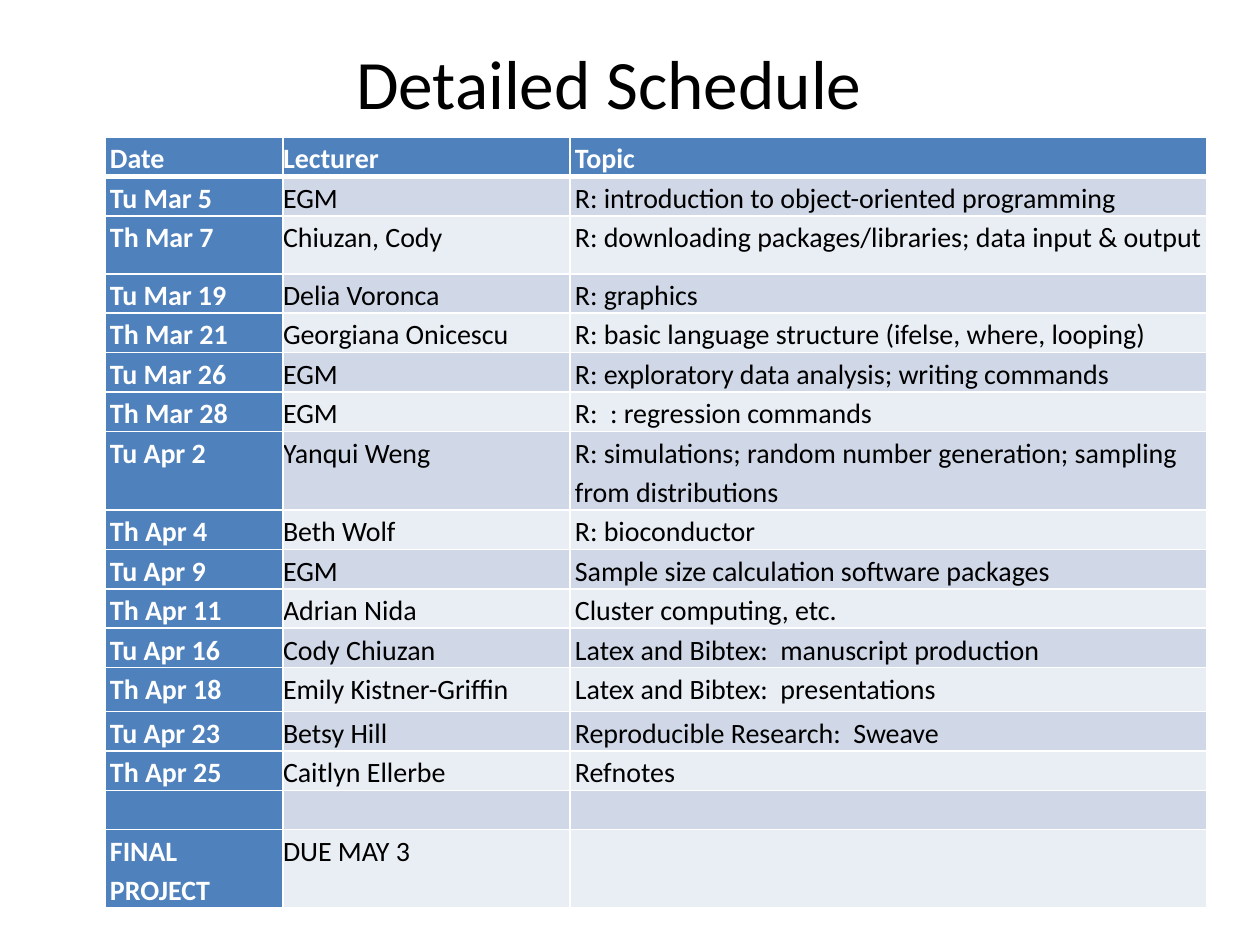
import pptx
import pptx.util
import pptx.dml.color
import pptx.enum.text
import pptx.oxml
import pptx.oxml.ns
import lxml.etree

TITLE = "Detailed Schedule"
SCHEDULE = [
    ("Date", "Lecturer", "Topic"),
    ("Tu Mar 5", "EGM", "R: introduction to object-oriented programming"),
    ("Th Mar 7", "Chiuzan, Cody", "R: downloading packages/libraries; data input & output"),
    ("Tu Mar 19", "Delia Voronca", "R: graphics"),
    ("Th Mar 21", "Georgiana Onicescu", "R: basic language structure (ifelse, where, looping)"),
    ("Tu Mar 26", "EGM", "R: exploratory data analysis; writing commands"),
    ("Th Mar 28", "EGM", "R:  : regression commands"),
    ("Tu Apr 2", "Yanqui Weng",
     "R: simulations; random number generation; sampling from distributions"),
    ("Th Apr 4", "Beth Wolf", "R: bioconductor"),
    ("Tu Apr 9", "EGM", "Sample size calculation software packages"),
    ("Th Apr 11", "Adrian Nida", "Cluster computing, etc."),
    ("Tu Apr 16", "Cody Chiuzan", "Latex and Bibtex:  manuscript production"),
    ("Th Apr 18", "Emily Kistner-Griffin", "Latex and Bibtex:  presentations"),
    ("Tu Apr 23", "Betsy Hill", "Reproducible Research:  Sweave"),
    ("Th Apr 25", "Caitlyn Ellerbe", "Refnotes"),
    ("", "", ""),
    ("FINAL PROJECT", "DUE MAY 3", ""),
]
COLUMN_WIDTHS = [178, 287, 637]
CELL_INSETS = [5, 0, 5]
ROW_HEIGHT = 39
TALL_ROWS = {2: 58, 7: 78, 12: 44, 16: 78}
FONT = "Calibri"
TEXT_SIZE = 16
BLUE, BANDS = "4F81BD", ("E9EDF4", "D0D8E8")
WHITE, BLACK = "FFFFFF", "000000"


def px(count):
    return pptx.util.Emu(round(count * 914400 / 126))


def color(value):
    return pptx.dml.color.RGBColor.from_string(value)


def add_span(para, text, size, ink, bold=False):
    span = para.add_run()
    span.text = text
    span.font.name = FONT
    span.font.size = pptx.util.Pt(size)
    span.font.bold = bold
    span.font.color.rgb = color(ink)


def set_borders(cell, bottom_width):
    properties = cell._tc.get_or_add_tcPr()
    widths = {"lnL": 1, "lnR": 1, "lnT": 1, "lnB": bottom_width}
    for position, (side, width) in enumerate(widths.items()):
        line = lxml.etree.Element(pptx.oxml.ns.qn("a:" + side), w=str(pptx.util.Pt(width)))
        fill = lxml.etree.SubElement(line, pptx.oxml.ns.qn("a:solidFill"))
        lxml.etree.SubElement(fill, pptx.oxml.ns.qn("a:srgbClr"), val=WHITE)
        properties.insert(position, line)


def fill_cell(cell, text, row, column):
    is_label = row == 0 or column == 0
    cell.fill.solid()
    cell.fill.fore_color.rgb = color(BLUE if is_label else BANDS[row % 2])
    cell.margin_left = cell.margin_right = px(CELL_INSETS[column])
    cell.margin_top = cell.margin_bottom = 0
    para = cell.text_frame.paragraphs[0]
    para.line_spacing = 1.15
    if text:
        add_span(para, text, TEXT_SIZE, WHITE if is_label else BLACK, is_label)
    else:
        # An empty cell takes its line height from the end-of-paragraph size
        lxml.etree.SubElement(para._p, pptx.oxml.ns.qn("a:endParaRPr"), sz=str(TEXT_SIZE * 100))
    set_borders(cell, 3 if row == 0 else 1)


deck = pptx.Presentation()
deck.slide_width, deck.slide_height = px(1260), px(945)
page = deck.slides.add_slide(deck.slide_layouts[5])

# Title
title = page.shapes.title
title.left, title.top, title.width, title.height = px(63), px(38), px(1092), px(88)
title.text_frame.vertical_anchor = pptx.enum.text.MSO_ANCHOR.MIDDLE
title_para = title.text_frame.paragraphs[0]
title_para.alignment = pptx.enum.text.PP_ALIGN.CENTER
add_span(title_para, TITLE, 39.6, BLACK)

# Schedule table
heights = [TALL_ROWS.get(row, ROW_HEIGHT) for row in range(len(SCHEDULE))]
frame = page.shapes.add_table(len(SCHEDULE), len(COLUMN_WIDTHS), px(105), px(137),
                              px(sum(COLUMN_WIDTHS)), px(sum(heights)))
table = frame.table
table.first_col = True
for column, width in enumerate(COLUMN_WIDTHS):
    table.columns[column].width = px(width)
for row, entries in enumerate(SCHEDULE):
    table.rows[row].height = px(heights[row])
    for column, text in enumerate(entries):
        fill_cell(table.cell(row, column), text, row, column)

deck.save("out.pptx")
